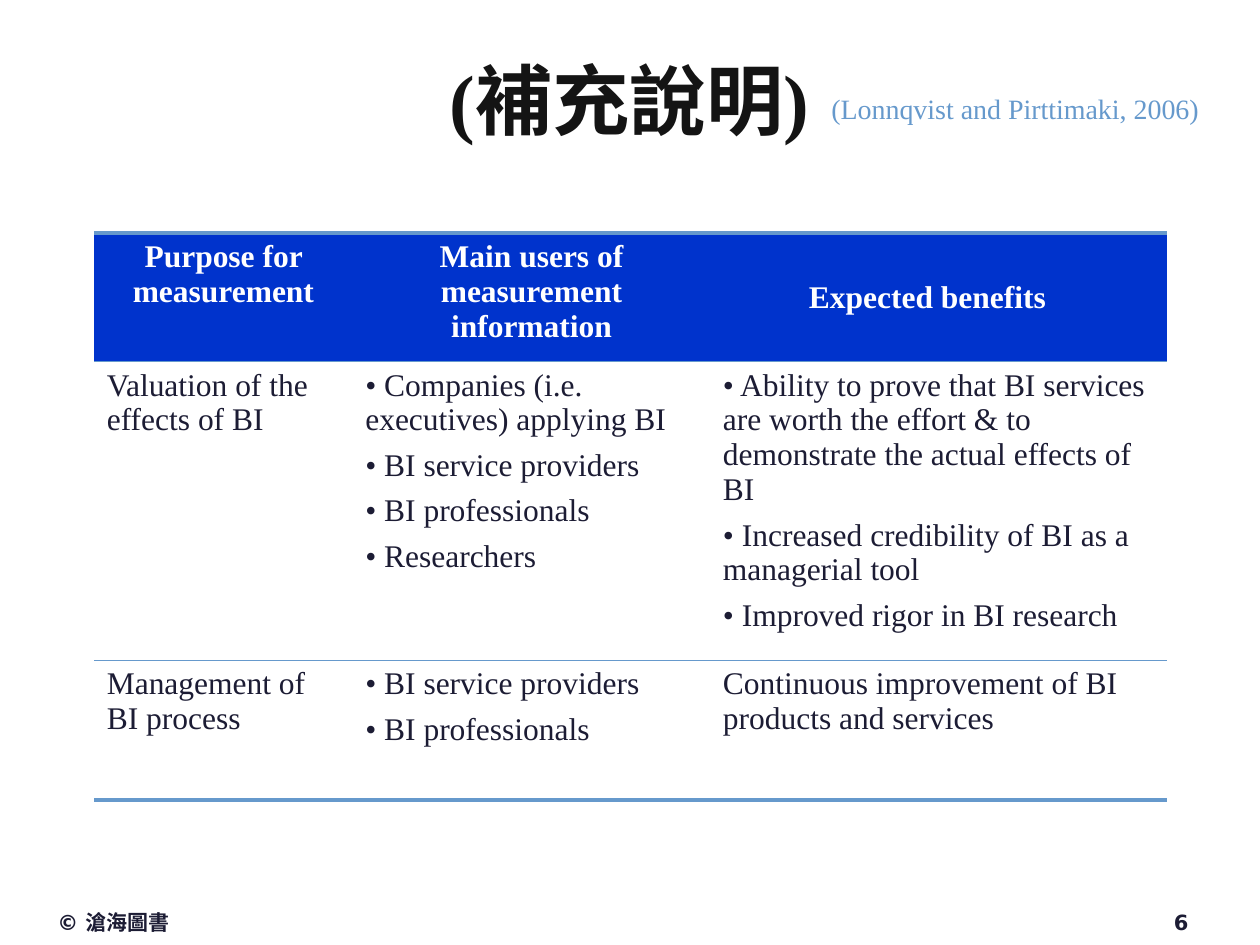
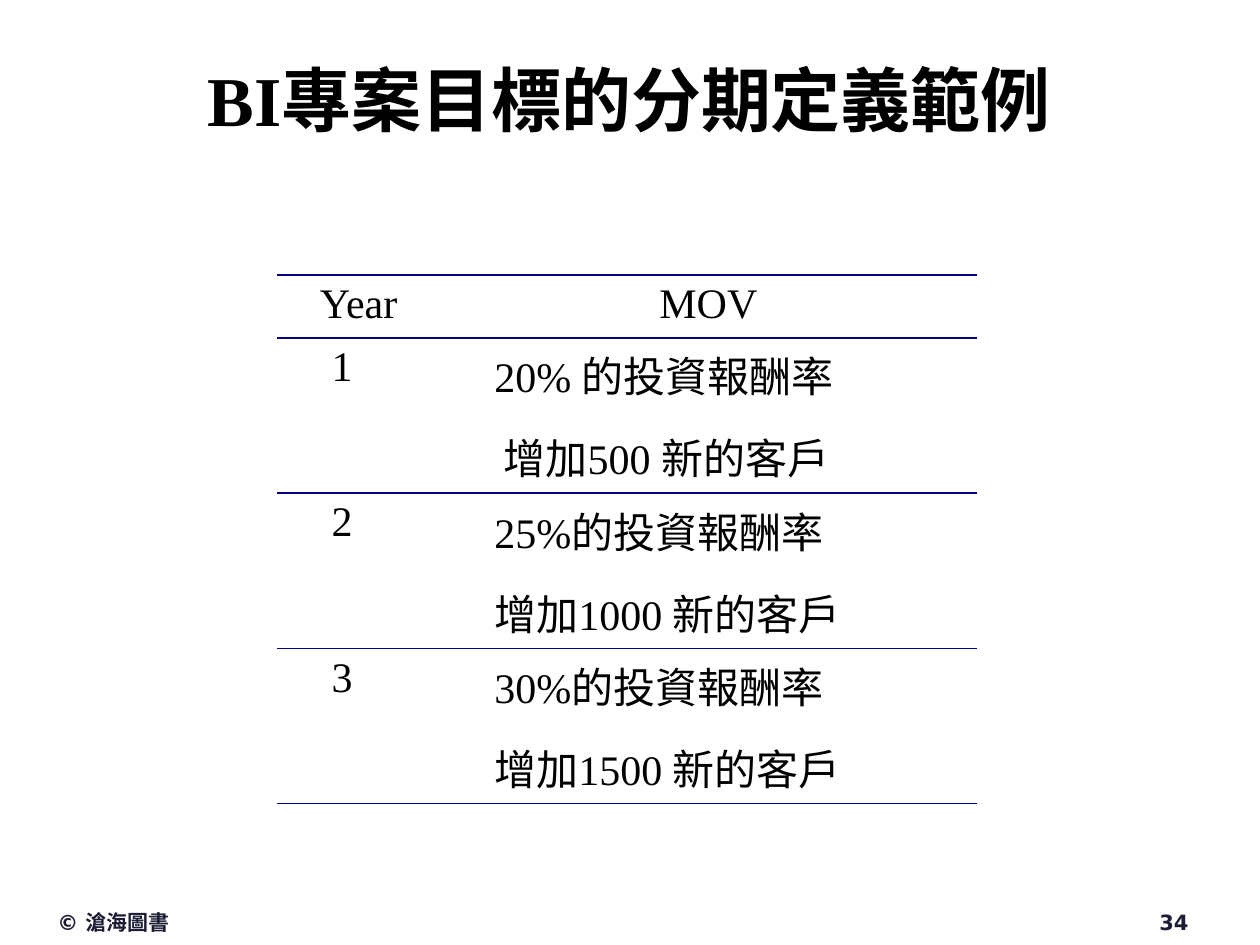
import pptx
import pptx.dml.color
import pptx.enum.text
import pptx.oxml
import pptx.oxml.ns
import pptx.util

Cm, Pt = pptx.util.Cm, pptx.util.Pt
Align = pptx.enum.text.PP_ALIGN
Anchor = pptx.enum.text.MSO_ANCHOR

SERIF, SANS = "Times New Roman", "DejaVu Sans"
INK, SKY, BLUE, NAVY = "1C1C34", "6699CC", "0033CC", "000080"
WHITE, BLACK = "FFFFFF", "000000"
OWNER = "© 滄海圖書"
PLAIN = "{2D5ABB26-0587-4C30-8999-92F81FD0307C}"  # no style, no grid

USES = [
    [["Purpose for measurement"],
     ["Main users of measurement information"],
     ["Expected benefits"]],
    [["Valuation of the effects of BI"],
     ["• Companies (i.e. executives) applying BI",
      "• BI service providers",
      "• BI professionals",
      "• Researchers"],
     ["• Ability to prove that BI services are worth the effort"
      " & to demonstrate the actual effects of BI",
      "• Increased credibility of BI as a managerial tool",
      "• Improved rigor in BI research"]],
    [["Management of BI process"],
     ["• BI service providers", "• BI professionals"],
     ["Continuous improvement of BI products and services"]],
]

GOALS = [
    [["Year"], ["MOV"]],
    [["1"], ["20% 的投資報酬率", " 增加500 新的客戶"]],
    [["2"], ["25%的投資報酬率", "增加1000 新的客戶"]],
    [["3"], ["30%的投資報酬率", "增加1500 新的客戶"]],
]

USE_LOOK = dict(
    at=(1.9, 4.7), cols=(5.21, 7.21, 9.2), rows=(2.59, 6.02, 2.82),
    size=18, head=(WHITE, True, BLUE), ink=INK, align=Align.LEFT,
    indent=0, after=0, rule=SKY, widths=(2.25, 1, 1, 2.25))
GOAL_LOOK = dict(
    at=(5.59, 5.54), cols=(3.28, 10.82), rows=(1.27, 3.13, 3.13, 3.13),
    size=24, head=(BLACK, False, WHITE), ink=BLACK, align=Align.JUSTIFY,
    indent=0.84, after=6, rule=NAVY, widths=(1, 1, 1, 1, 1))


def rgb(code):
    return pptx.dml.color.RGBColor.from_string(code)


def style(para, size, color, bold=False, face=SERIF, align=Align.LEFT):
    para.alignment = align
    font = para.font
    font.size, font.bold, font.name = Pt(size), bold, face
    font.color.rgb = rgb(color)


def label(slide, text, at, size, color, anchor=Anchor.TOP, **look):
    box = slide.shapes.add_textbox(*[Cm(x) for x in at])
    frame = box.text_frame
    frame.word_wrap = True
    frame.vertical_anchor = anchor
    frame.text = text
    style(frame.paragraphs[0], size, color, **look)


def page(deck, title, size, color, number):
    """Add a slide with the shared title and footer."""
    slide = deck.slides.add_slide(deck.slide_layouts[6])
    label(slide, title, (1.27, 0.84, 22.83, 2.29), size, color,
          Anchor.MIDDLE, bold=True, align=Align.CENTER)
    for text, left, align in ((OWNER, 0.91, Align.LEFT),
                              (str(number), 18.29, Align.RIGHT)):
        label(slide, text, (left, 18.21, 5.92, 0.84), 12, INK,
              bold=True, face=SANS, align=align)
    return slide


def edge(cell, side, color, width):
    """Draw one border; sides must be added bottom first, then top."""
    space = pptx.oxml.ns.nsdecls("a")
    line = pptx.oxml.parse_xml(
        f'<a:ln{side} {space} w="{Pt(width)}"><a:solidFill>'
        f'<a:srgbClr val="{color}"/></a:solidFill></a:ln{side}>')
    cell._tc.get_or_add_tcPr().insert(0, line)


def fill_cell(cell, lines, look, top):
    color, bold, back = look["head"] if top else (look["ink"], False, None)
    if back:
        cell.fill.solid()
        cell.fill.fore_color.rgb = rgb(back)
    else:
        cell.fill.background()
    cell.text = "\n".join(lines)
    for i, para in enumerate(cell.text_frame.paragraphs):
        if not top:
            para._p.get_or_add_pPr().set("marL", str(Cm(look["indent"])))
        if i:
            para.space_before = Pt(6)
        para.space_after = Pt(look["after"])
        style(para, look["size"], color, bold,
              align=Align.CENTER if top else look["align"])


def grid(slide, data, look):
    cols, rows = look["cols"], look["rows"]
    left, top = look["at"]
    frame = slide.shapes.add_table(
        len(rows), len(cols), Cm(left), Cm(top), Cm(sum(cols)), Cm(sum(rows)))
    table = frame.table
    table.first_row = table.horz_banding = False
    table._tbl.tblPr[0].text = PLAIN
    for col, width in zip(table.columns, cols):
        col.width = Cm(width)
    for r, (row, tall) in enumerate(zip(data, rows)):
        table.rows[r].height = Cm(tall)
        for c, lines in enumerate(row):
            cell = table.cell(r, c)
            fill_cell(cell, lines, look, r == 0)
            edge(cell, "B", look["rule"], look["widths"][r + 1])
            edge(cell, "T", look["rule"], look["widths"][r])
    return table


def main():
    deck = pptx.Presentation()
    deck.slide_width, deck.slide_height = Cm(25.4), Cm(19.05)

    slide = page(deck, "(補充說明)", 44, "141414", 6)
    gains = grid(slide, USES, USE_LOOK).cell(0, 2)
    gains.vertical_anchor = Anchor.MIDDLE
    gains.margin_right = Cm(0.7)
    label(slide, "(Lonnqvist and Pirttimaki, 2006)",
          (16.51, 1.73, 8.3, 0.94), 16, SKY)

    slide = page(deck, "BI專案目標的分期定義範例", 40, BLACK, 34)
    grid(slide, GOALS, GOAL_LOOK)
    deck.save("out.pptx")


if __name__ == "__main__":
    main()
